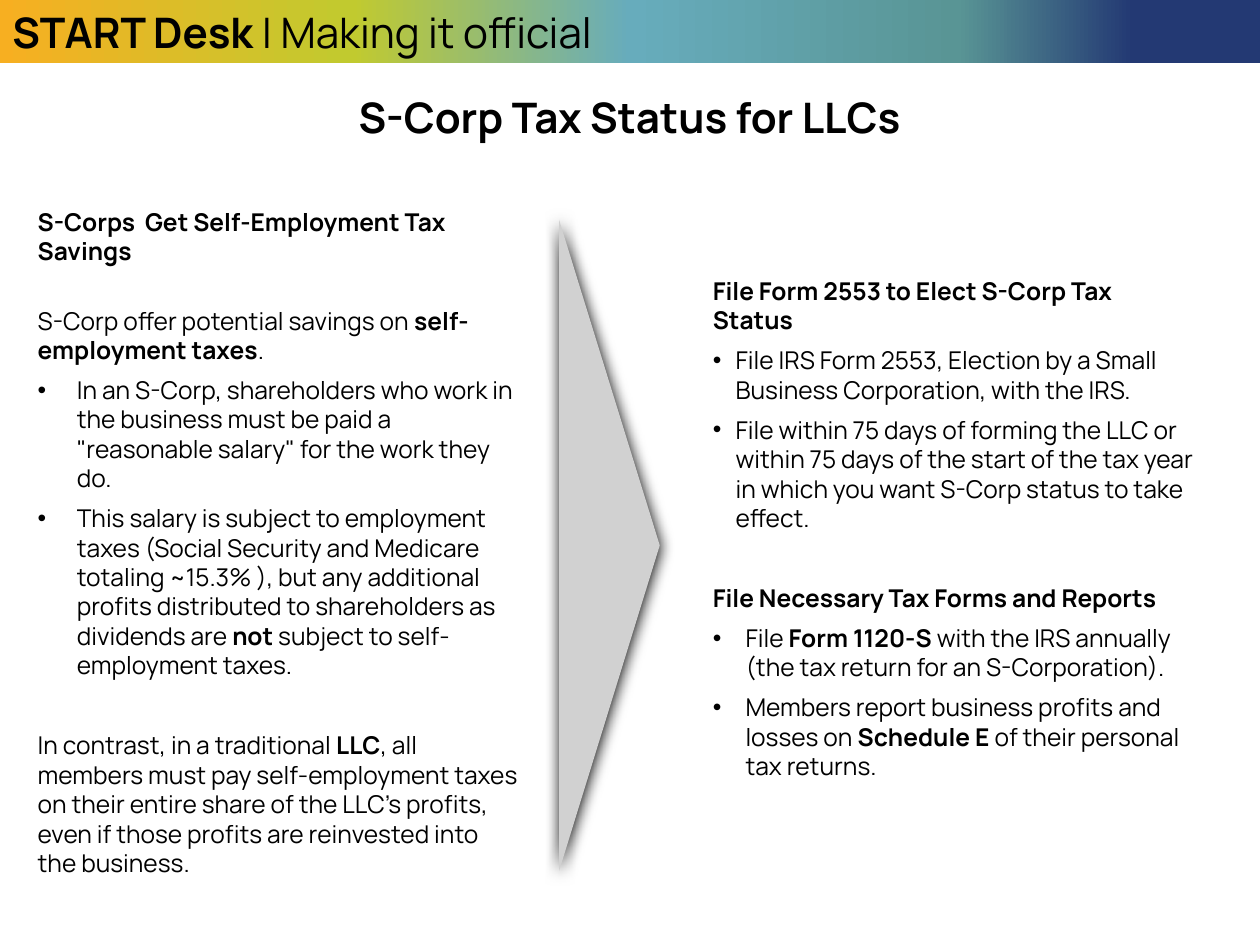
import lxml.etree
import pptx
import pptx.dml.color
import pptx.enum.shapes
import pptx.enum.text
import pptx.oxml.ns
import pptx.util

Cm, Pt = pptx.util.Cm, pptx.util.Pt
RGB = pptx.dml.color.RGBColor.from_string
qn = pptx.oxml.ns.qn
Form = pptx.enum.shapes.MSO_SHAPE
Align = pptx.enum.text.PP_ALIGN
Anchor = pptx.enum.text.MSO_ANCHOR

THEME = {
    "font": "Manrope", "ink": "000000", "arrow": "D1D1D1",
    "big": 24, "body": 14, "gap": 6, "line": 17,
    "band": [(0, "F7AF21"), (28, "C1CA2F"), (50, "67ACBC"),
             (76, "599595"), (90, "233973")],
    "blur": 8.5, "drop": 1,
}
ONE = THEME["gap"] + THEME["line"]
TWO = ONE + THEME["gap"]

SIZE = (25.4, 19.05)
BAND = (0, 0, 25.4, 1.27)
TITLE = (0.51, 1.73, 24.36, 1.27)
ARROW = (5.72, 9.98, 13.13, 2.03)
LEFT = (0.51, 4.04, 10.21, 13.89)
RIGHT = (14.12, 5.44, 10.21, 11.13)

HEAD = [("**START Desk **| Making it official", 0, 0)]
NAME = [("**S-Corp Tax Status for LLCs**", 0, 0)]
SAVE = [
    ("**S-Corps  Get Self-Employment Tax Savings**", 0, 0),
    ("S-Corp offer potential savings on **self-employment taxes**.", 0, ONE),
    ("In an S-Corp, shareholders who work in the business must be paid a "
     "\"reasonable salary\" for the work they do.", 0.79, THEME["gap"]),
    ("This salary is subject to employment taxes (Social Security and "
     "Medicare totaling ~15.3% ), but any additional profits distributed to "
     "shareholders as dividends are **not** subject to self-employment taxes.",
     0.79, THEME["gap"]),
    ("In contrast, in a traditional **LLC**, all members must pay "
     "self-employment taxes on their entire share of the LLC's profits, even "
     "if those profits are reinvested into the business.", 0, TWO),
]
FILE = [
    ("**File Form 2553 to Elect S-Corp Tax Status**", 0, 0),
    ("File IRS Form 2553, Election by a Small Business Corporation, with the "
     "IRS.", 0.46, THEME["gap"]),
    ("File within 75 days of forming the LLC or within 75 days of the start "
     "of the tax year in which you want S-Corp status to take effect.",
     0.46, THEME["gap"]),
    ("**File Necessary Tax Forms and Reports**", 0, TWO),
    ("File **Form 1120-S** with the IRS annually (the tax return for an "
     "S-Corporation).", 0.66, THEME["gap"]),
    ("Members report business profits and losses on **Schedule E** of their "
     "personal tax returns.", 0.66, THEME["gap"]),
]


def node(top, tag, **attrs):
    return lxml.etree.SubElement(
        top, qn(tag), {key: str(val) for key, val in attrs.items()})


def write(frame, paras, size, align=Align.LEFT):
    frame.word_wrap = True
    for num, (text, dent, gap) in enumerate(paras):
        para = frame.add_paragraph() if num else frame.paragraphs[0]
        if dent:
            props = para._p.get_or_add_pPr()
            props.set("marL", str(Cm(dent)))
            props.set("indent", str(-Cm(dent)))
            node(props, "a:buFont", typeface="Arial")
            node(props, "a:buChar", char="•")
        para.alignment = align
        if gap:
            para.space_before = Pt(gap)
        for pos, part in enumerate(text.split("**")):
            if part:
                run = para.add_run()
                run.text = part
                run.font.name = THEME["font"]
                run.font.size = Pt(size)
                run.font.bold = pos % 2 == 1
                run.font.color.rgb = RGB(THEME["ink"])


def box(slide, place, paras, size, align=Align.LEFT):
    frame = slide.shapes.add_textbox(*map(Cm, place)).text_frame
    write(frame, paras, size, align)


def shape(slide, form, place):
    item = slide.shapes.add_shape(form, *map(Cm, place))
    item.shadow.inherit = False
    item.line.fill.background()
    return item


def band(slide):
    item = shape(slide, Form.RECTANGLE, BAND)
    item.fill.gradient()
    item.fill.gradient_angle = 0
    stops = item._element.spPr.find(".//" + qn("a:gsLst"))
    stops[:] = []
    for spot, tint in THEME["band"]:
        stop = node(stops, "a:gs", pos=spot * 1000)
        node(stop, "a:srgbClr", val=tint)
    item.text_frame.vertical_anchor = Anchor.MIDDLE
    write(item.text_frame, HEAD, THEME["big"])


def arrow(slide):
    item = shape(slide, Form.ISOSCELES_TRIANGLE, ARROW)
    item.rotation = 90
    item.fill.solid()
    item.fill.fore_color.rgb = RGB(THEME["arrow"])
    glow = node(item._element.spPr.find(qn("a:effectLst")), "a:outerShdw",
                blurRad=Pt(THEME["blur"]), dist=Pt(THEME["drop"]),
                dir=90 * 60000, rotWithShape=0)
    node(glow, "a:srgbClr", val=THEME["ink"])


def main():
    deck = pptx.Presentation()
    deck.slide_width, deck.slide_height = map(Cm, SIZE)
    slide = deck.slides.add_slide(deck.slide_layouts[6])
    box(slide, TITLE, NAME, THEME["big"], Align.CENTER)
    band(slide)
    box(slide, LEFT, SAVE, THEME["body"])
    arrow(slide)
    box(slide, RIGHT, FILE, THEME["body"])
    deck.save("out.pptx")


if __name__ == "__main__":
    main()
